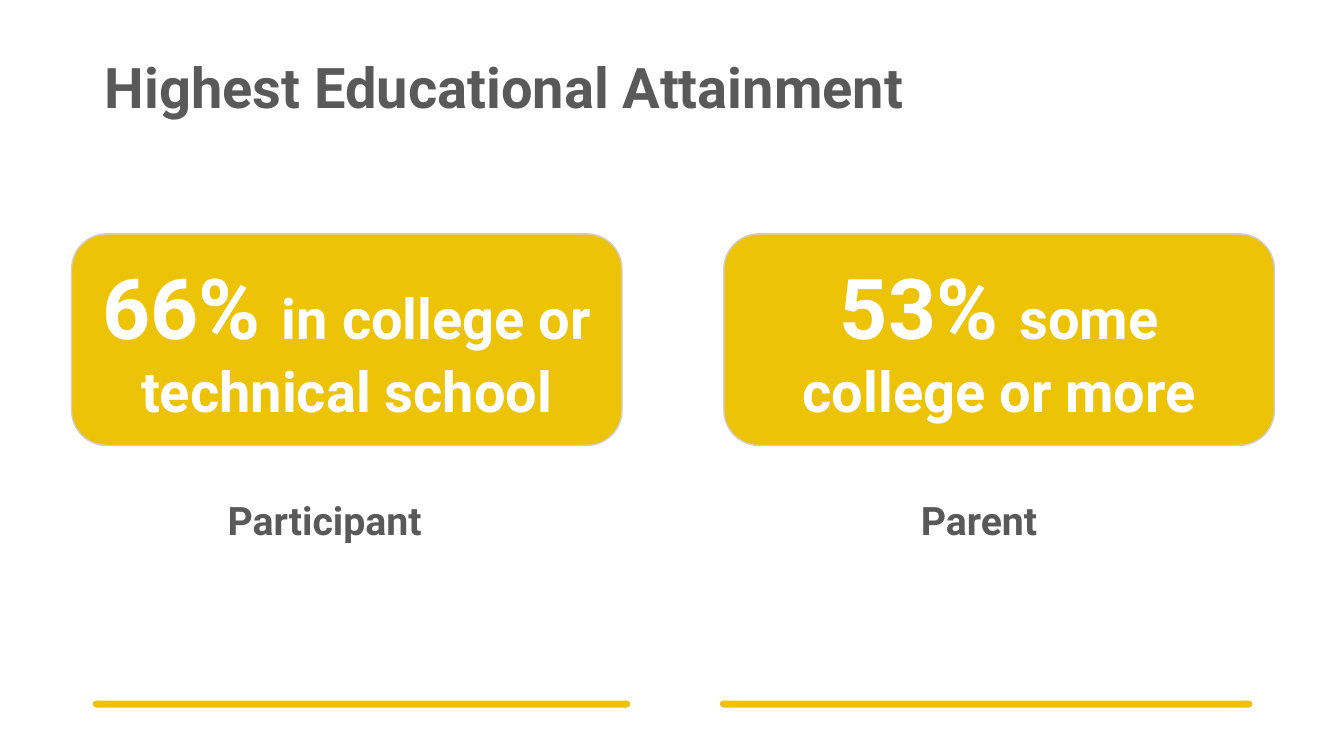
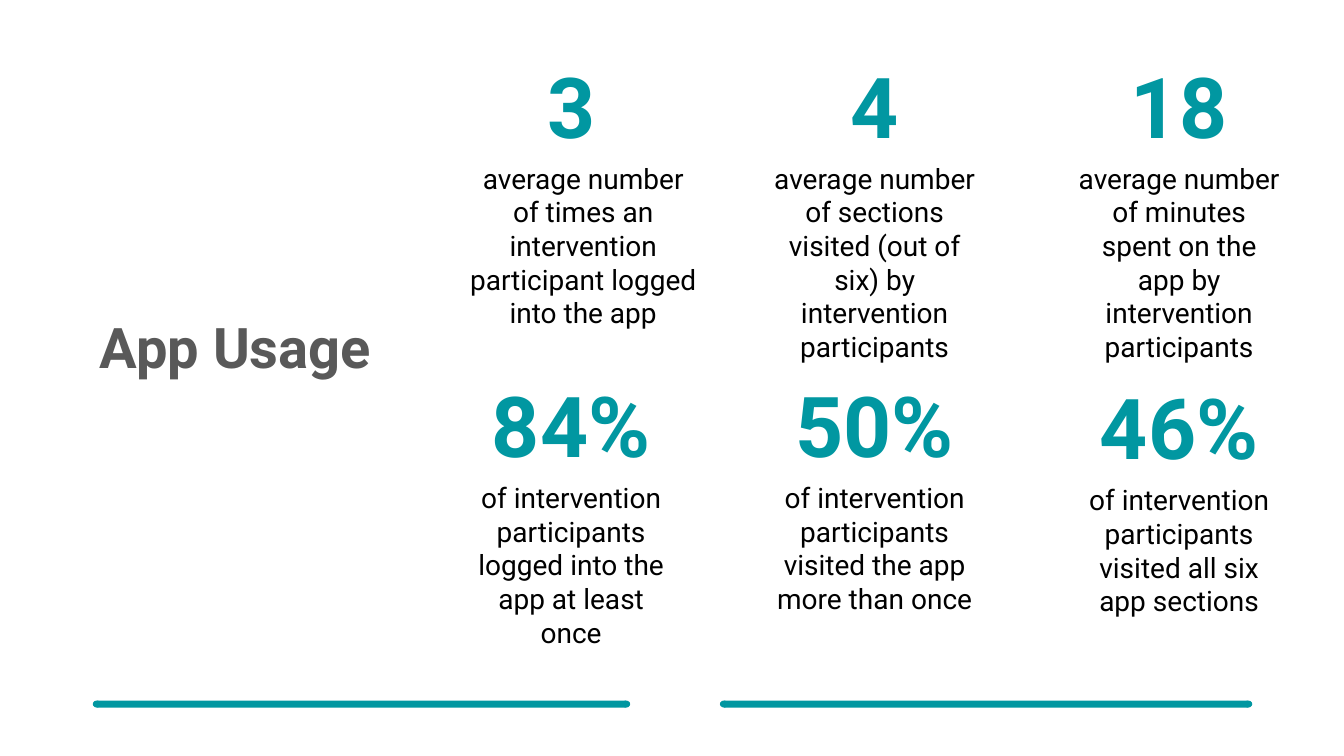
import pptx
import pptx.util
import pptx.dml.color
import pptx.enum.shapes
import pptx.enum.text

PX = 9144  # EMU in one px, 100 px to the inch
KIND = pptx.enum.shapes.MSO_SHAPE
ALIGN = pptx.enum.text.PP_ALIGN
ANCHOR = pptx.enum.text.MSO_ANCHOR


class Theme:
    font = "Roboto"
    gold, teal = "EDC308", "0197A1"
    gray, edge, white, black = "595959", "D0CECE", "FFFFFF", "000000"
    huge, head, label, body = 60, 40, 28, 20


def write(frame, text, size=Theme.body, color=Theme.black, bold=True,
          align=ALIGN.CENTER, anchor=ANCHOR.TOP, lead=None, inset=(10, 5)):
    """Add a run to the first paragraph of the frame and format both."""
    frame.word_wrap = True
    frame.auto_size = pptx.enum.text.MSO_AUTO_SIZE.NONE
    frame.vertical_anchor = anchor
    frame.margin_left = frame.margin_right = inset[0] * PX
    frame.margin_top = frame.margin_bottom = inset[1] * PX
    para = frame.paragraphs[0]
    para.alignment = align
    if lead:
        para.line_spacing = lead
    run = para.add_run()
    run.text = text
    run.font.name = Theme.font
    run.font.size = pptx.util.Pt(size)
    run.font.bold = bold
    run.font.color.rgb = pptx.dml.color.RGBColor.from_string(color)


def block(slide, kind, box, fill, line=None):
    shape = slide.shapes.add_shape(kind, *[n * PX for n in box])
    shape.shadow.inherit = False
    shape.fill.solid()
    shape.fill.fore_color.rgb = pptx.dml.color.RGBColor.from_string(fill)
    if line:
        shape.line.color.rgb = pptx.dml.color.RGBColor.from_string(line)
        shape.line.width = pptx.util.Pt(1)
    else:
        shape.line.fill.background()
    return shape


deck = pptx.Presentation()
deck.slide_width, deck.slide_height = 1333 * PX, 750 * PX

# Shared title and footer: a bar, split by a gap, with round ends
pages = []
for name, box, align, color in [
    ("Highest Educational Attainment", (94, 40, 1148, 100), ALIGN.LEFT, Theme.gold),
    ("App Usage", (0, 38, 467, 620), ALIGN.CENTER, Theme.teal),
]:
    slide = deck.slides.add_slide(deck.slide_layouts[5])
    title = slide.shapes.title
    title.left, title.top, title.width, title.height = [n * PX for n in box]
    write(title.text_frame, name, size=Theme.head, color=Theme.gray,
          align=align, anchor=ANCHOR.MIDDLE, lead=0.9)
    block(slide, KIND.RECTANGLE, (96, 695, 1142, 7), color)
    block(slide, KIND.RECTANGLE, (622, 652, 95, 98), Theme.white, Theme.white)
    for left in (92, 617, 714, 1234):
        block(slide, KIND.OVAL, (left, 695, 8, 7), color)
    pages.append(slide)
school, usage = pages

# Attainment cards
for left, share, text, mid, who in [
    (71, "66% ", "in college or technical school", 322, "Participant"),
    (718, "53% ", "some college or more", 971, "Parent"),
]:
    card = block(school, KIND.ROUNDED_RECTANGLE, (left, 232, 546, 210),
                 Theme.gold, Theme.edge)
    for part, size in [(share, Theme.huge), (text, Theme.head)]:
        write(card.text_frame, part, size=size, color=Theme.white,
              anchor=ANCHOR.MIDDLE)
    label = school.shapes.add_textbox((mid - 108) * PX, 478 * PX, 216 * PX, 40 * PX)
    write(label.text_frame, who, size=Theme.label, color=Theme.gray,
          lead=1.3, inset=(0, 0))

# Usage figures: left, top, caption width, caption height
for left, top, wide, high, figure, text in [
    (456, 49, 245, 178, "3",
     "average number of times an intervention participant logged into the app"),
    (757, 49, 221, 178, "4",
     "average number of sections visited (out of six) by intervention participants"),
    (1059, 49, 221, 178, "18",
     "average number of minutes spent on the app by intervention participants"),
    (456, 366, 221, 145, "84%",
     "of intervention participants logged into the app at least once"),
    (757, 366, 221, 145, "50%",
     "of intervention participants visited the app more than once"),
    (1059, 368, 221, 145, "46%",
     "of intervention participants visited all six app sections"),
]:
    number = usage.shapes.add_textbox(left * PX, top * PX, 221 * PX, 118 * PX)
    write(number.text_frame, figure, size=Theme.huge, color=Theme.teal)
    note = usage.shapes.add_textbox(left * PX, (top + 106) * PX, wide * PX, high * PX)
    write(note.text_frame, text, bold=False)

deck.save("out.pptx")
